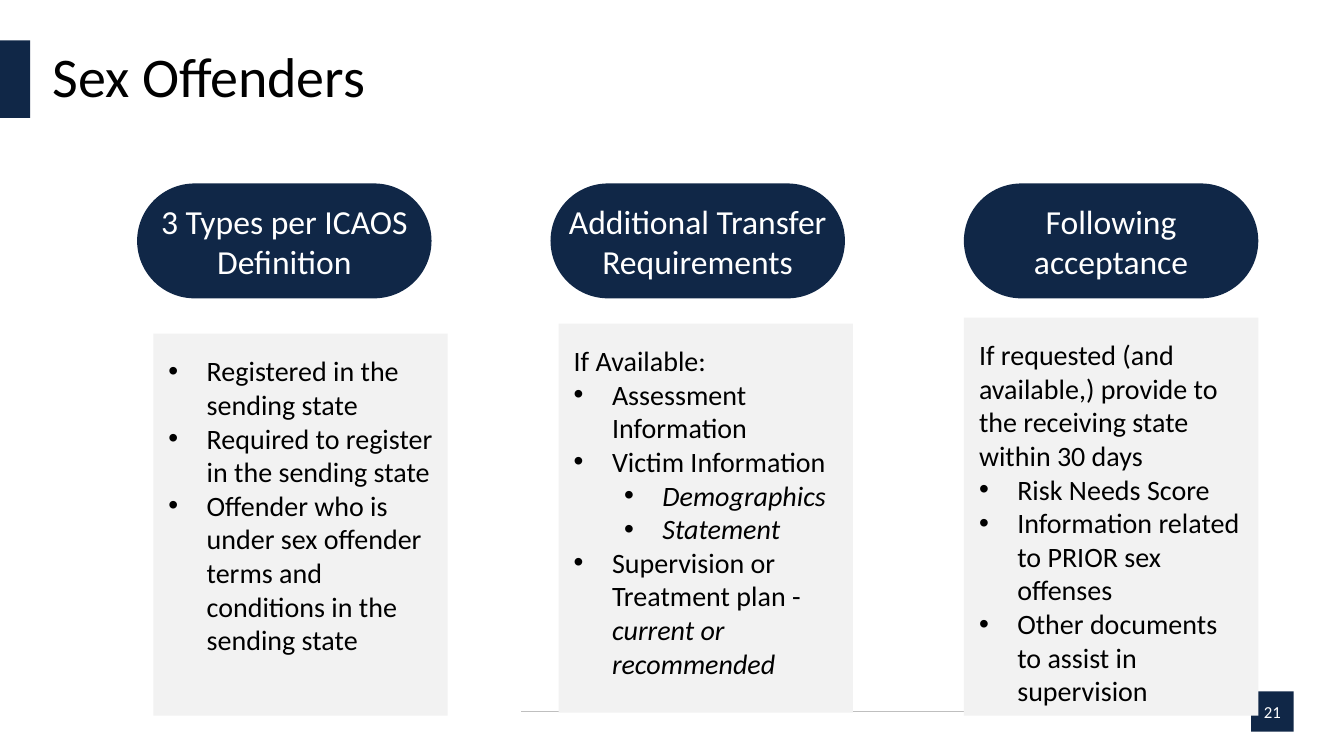
from dataclasses import dataclass

from lxml.etree import SubElement
from pptx import Presentation
from pptx.dml.color import RGBColor
from pptx.enum.shapes import MSO_CONNECTOR, MSO_SHAPE
from pptx.enum.text import MSO_ANCHOR, PP_ALIGN
from pptx.oxml.ns import qn
from pptx.util import Pt

EMU_PER_PX = 9144


@dataclass(frozen=True)
class Theme:
    """Colours, font and type sizes of the slide."""

    navy: str = "102747"
    panel: str = "F2F2F2"
    rule: str = "BFBFBF"
    black: str = "000000"
    white: str = "FFFFFF"
    font: str = "Calibri"
    title_size: int = 40
    heading_size: int = 24
    body_size: int = 20
    number_size: int = 12


THEME = Theme()

COLUMN_TOP, COLUMN_WIDTH, PILL_HEIGHT = 182, 292, 114

COLUMNS = [
    {
        "heading": "3 Types per ICAOS Definition",
        "pill_left": 136,
        "panel": (152, 331, COLUMN_WIDTH, 379),
        "items": [
            (1, "Registered in the sending state", ""),
            (1, "Required to register in the sending state", ""),
            (1, "Offender who is under sex offender terms and conditions in the sending state", ""),
        ],
    },
    {
        "heading": "Additional Transfer Requirements",
        "pill_left": 546,
        "panel": (554, 321, COLUMN_WIDTH, 386),
        "items": [
            (0, "If Available:", ""),
            (1, "Assessment Information", ""),
            (1, "Victim Information", ""),
            (2, "", "Demographics"),
            (2, "", "Statement"),
            (1, "Supervision or Treatment plan - ", "current or recommended"),
        ],
    },
    {
        "heading": "Following acceptance",
        "pill_left": 956,
        "panel": (956, 315, COLUMN_WIDTH, 395),
        "items": [
            (0, "If requested (and available,) provide to the receiving state within 30 days", ""),
            (1, "Risk Needs Score", ""),
            (1, "Information related to PRIOR sex offenses", ""),
            (1, "Other documents to assist in supervision", ""),
        ],
    },
]


def px(*lengths):
    """Turn px lengths into a list of EMU."""
    return [length * EMU_PER_PX for length in lengths]


def set_frame(text_frame, insets, anchor):
    """Set wrapping, insets (left, top, right, bottom) and anchor."""
    text_frame.word_wrap = True
    text_frame.vertical_anchor = anchor
    (text_frame.margin_left, text_frame.margin_top,
     text_frame.margin_right, text_frame.margin_bottom) = px(*insets)


def format_run(run, size, color, italic=False):
    """Apply the theme font, a size and a colour to a run."""
    run.font.name = THEME.font
    run.font.size = Pt(size)
    run.font.color.rgb = RGBColor.from_string(color)
    run.font.italic = italic


def write_line(text_frame, text, size, color, alignment):
    """Write a single formatted paragraph."""
    paragraph = text_frame.paragraphs[0]
    paragraph.text = text
    paragraph.alignment = alignment
    format_run(paragraph.runs[0], size, color)
    return paragraph


def add_block(slide, kind, box, fill):
    """Add a flat filled shape without outline."""
    shape = slide.shapes.add_shape(kind, *px(*box))
    shape.shadow.inherit = False
    shape.fill.solid()
    shape.fill.fore_color.rgb = RGBColor.from_string(fill)
    shape.line.fill.background()
    return shape


def set_bullet(paragraph, level):
    """Give a paragraph a hanging bullet at level 1 or 2."""
    paragraph.level = level - 1
    properties = paragraph._p.get_or_add_pPr()
    left, hang = px(38 + 50 * (level - 1), 38)
    properties.set("marL", str(left))
    properties.set("indent", str(-hang))
    SubElement(properties, qn("a:buFont"), typeface="Arial")
    SubElement(properties, qn("a:buChar"), char="•")


def add_title(slide, box, text):
    """Add the accent at the slide edge and the title beside it."""
    left, top, width, height = box
    add_block(slide, MSO_SHAPE.RECTANGLE, (0, top, 30, height), THEME.navy)
    title = slide.shapes.add_textbox(*px(left, top, width, height))
    set_frame(title.text_frame, (0, 0, 0, 0), MSO_ANCHOR.MIDDLE)
    paragraph = write_line(title.text_frame, text, THEME.title_size, THEME.black, PP_ALIGN.LEFT)
    paragraph.line_spacing = 0.9


def add_footer(slide, box, number):
    """Add the footer rule with the slide number at its right end."""
    left, top, width, height = box
    badge_width, gap = 42, 15
    badge_left = left + width - badge_width
    badge = add_block(slide, MSO_SHAPE.RECTANGLE, (badge_left, top, badge_width, height), THEME.navy)
    set_frame(badge.text_frame, (0, 0, 0, 0), MSO_ANCHOR.MIDDLE)
    write_line(badge.text_frame, number, THEME.number_size, THEME.white, PP_ALIGN.CENTER)
    middle = top + height // 2
    rule = slide.shapes.add_connector(
        MSO_CONNECTOR.STRAIGHT, *px(left, middle, badge_left - gap, middle))
    rule.line.color.rgb = RGBColor.from_string(THEME.rule)
    rule.line.width = Pt(0.5)
    SubElement(rule._element.spPr, qn("a:effectLst"))


def add_pill(slide, box, heading):
    """Add a rounded column heading."""
    pill = add_block(slide, MSO_SHAPE.ROUNDED_RECTANGLE, box, THEME.navy)
    pill.adjustments[0] = 0.5
    set_frame(pill.text_frame, (0, 0, 0, 0), MSO_ANCHOR.MIDDLE)
    write_line(pill.text_frame, heading, THEME.heading_size, THEME.white, PP_ALIGN.CENTER)


def add_panel(slide, box, items):
    """Add a grey panel of items, each a level, plain text and italic text."""
    panel = add_block(slide, MSO_SHAPE.RECTANGLE, box, THEME.panel)
    text_frame = panel.text_frame
    set_frame(text_frame, (15, 20, 15, 10), MSO_ANCHOR.TOP)
    for index, (level, plain, emphasis) in enumerate(items):
        paragraph = text_frame.add_paragraph() if index else text_frame.paragraphs[0]
        paragraph.alignment = PP_ALIGN.LEFT
        if level:
            set_bullet(paragraph, level)
        for text, italic in ((plain, False), (emphasis, True)):
            if text:
                run = paragraph.add_run()
                run.text = text
                format_run(run, THEME.body_size, THEME.black, italic)


def main():
    """Build the slide and save it."""
    presentation = Presentation()
    presentation.slide_width, presentation.slide_height = px(1333, 750)
    slide = presentation.slides.add_slide(presentation.slide_layouts[6])
    add_title(slide, (52, 40, 1231, 77), "Sex Offenders")
    add_footer(slide, (517, 686, 766, 40), "21")
    for column in COLUMNS:
        pill_box = (column["pill_left"], COLUMN_TOP, COLUMN_WIDTH, PILL_HEIGHT)
        add_pill(slide, pill_box, column["heading"])
        add_panel(slide, column["panel"], column["items"])
    presentation.save("out.pptx")


if __name__ == "__main__":
    main()
